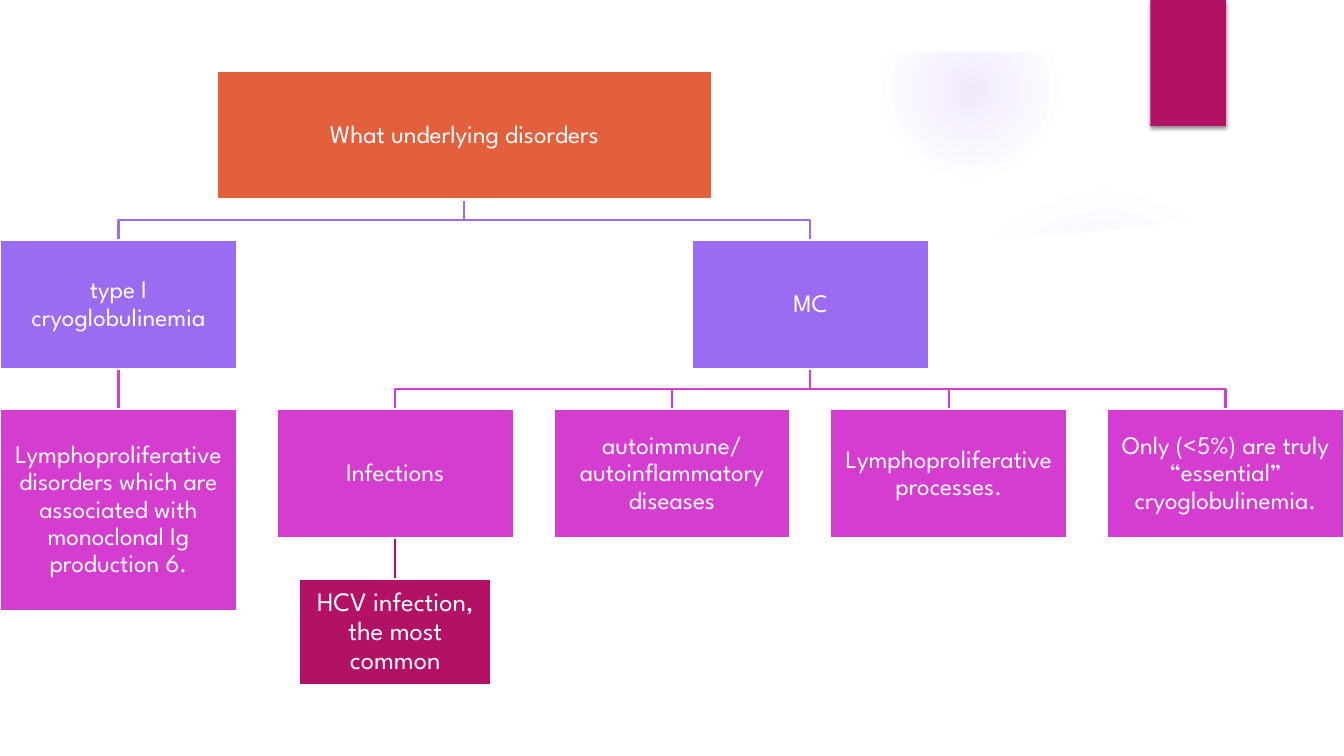
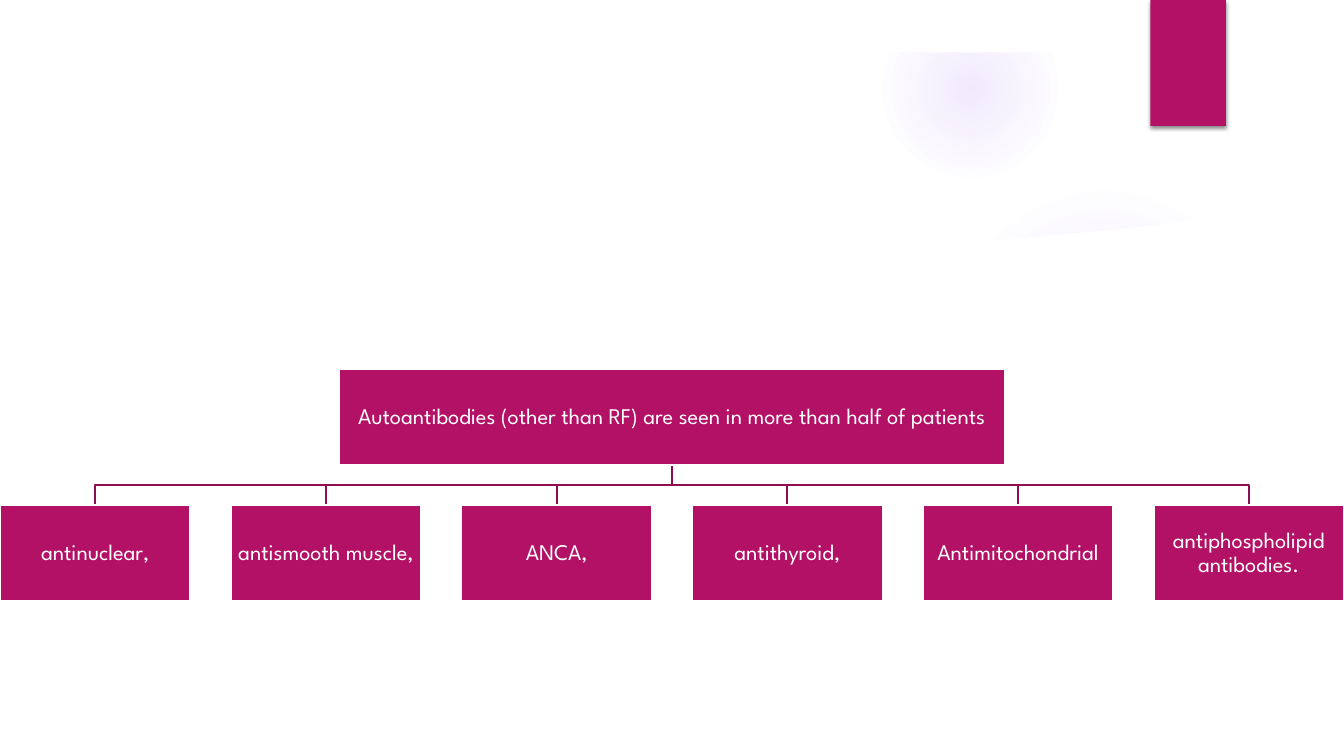
from dataclasses import dataclass, field

from pptx import Presentation
from pptx.dml.color import RGBColor
from pptx.enum.shapes import MSO_CONNECTOR, MSO_SHAPE
from pptx.enum.text import MSO_ANCHOR, PP_ALIGN
from pptx.oxml import parse_xml
from pptx.oxml.ns import nsdecls, qn
from pptx.util import Inches, Pt

RECTANGLE = MSO_SHAPE.RECTANGLE
OVAL = MSO_SHAPE.OVAL
STRAIGHT = MSO_CONNECTOR.STRAIGHT
MIDDLE = MSO_ANCHOR.MIDDLE
CENTER = PP_ALIGN.CENTER


@dataclass(frozen=True)
class Theme:
    width: float = 13.33
    height: float = 7.5
    font: str = "League Spartan"
    white: str = "FFFFFF"
    orange: str = "E45F3C"
    violet: str = "9B6BF2"
    orchid: str = "D53DD0"
    berry: str = "B31166"
    dark_berry: str = "8F0E52"
    disorder_size: int = 18
    infection_size: int = 19
    antibody_size: int = 16
    line: float = 1.5
    inset: float = 0.01
    level_gap: float = 0.4


THEME = Theme()

PANEL_CURVE = [
    (12.84, 2.04), (12.28, 2.13), (11.72, 2.2), (11.16, 2.27), (10.6, 2.32),
    (10.04, 2.37), (9.49, 2.41), (8.94, 2.44), (8.4, 2.46), (7.34, 2.48),
    (6.32, 2.47), (5.35, 2.45), (4.44, 2.41), (3.21, 2.33), (2.16, 2.24),
    (1.35, 2.15), (0.5, 2.04),
]


@dataclass
class Node:
    text: str
    fill: str
    width: float
    height: float
    size: int
    children: list = field(default_factory=list)
    link: str = ""
    center: float = 0
    top: float = 0

    @property
    def bottom(self):
        return self.top + self.height


def rgb(colour):
    return RGBColor.from_string(colour)


def add_block(slide, kind, left, top, width, height, fill):
    block = slide.shapes.add_shape(
        kind, Inches(left), Inches(top), Inches(width), Inches(height))
    block.shadow.inherit = False
    block.fill.solid()
    block.fill.fore_color.rgb = rgb(fill)
    block.line.fill.background()
    return block


def add_path(slide, points, close):
    (start_x, start_y), *rest = [(Inches(x), Inches(y)) for x, y in points]
    builder = slide.shapes.build_freeform(start_x, start_y)
    builder.add_line_segments(rest, close=close)
    outline = builder.convert_to_shape()
    outline.shadow.inherit = False
    return outline


def add_glow(slide, left, top, diameter, stops):
    glow = add_block(slide, OVAL, left, top, diameter, diameter, THEME.violet)
    stop_xml = "".join(
        f'<a:gs pos="{position * 1000}"><a:srgbClr val="{THEME.violet}">'
        f'<a:alpha val="{alpha * 1000}"/></a:srgbClr></a:gs>'
        for position, alpha in stops)
    gradient = parse_xml(
        f'<a:gradFill {nsdecls("a")}><a:gsLst>{stop_xml}</a:gsLst>'
        '<a:path path="circle"><a:fillToRect l="50000" t="50000" r="50000" b="50000"/>'
        '</a:path></a:gradFill>')
    properties = glow._element.spPr
    properties.replace(properties.find(qn("a:solidFill")), gradient)


def add_bookmark(slide):
    bookmark = add_block(slide, RECTANGLE, 11.41, 0, 0.75, 1.25, THEME.berry)
    bookmark._element.spPr.find(qn("a:effectLst")).append(parse_xml(
        f'<a:outerShdw {nsdecls("a")} blurRad="{Pt(3)}" dist="{Pt(2)}" '
        'dir="5400000" rotWithShape="0"><a:srgbClr val="000000">'
        '<a:alpha val="45000"/></a:srgbClr></a:outerShdw>'))


def add_backdrop(slide):
    add_glow(slide, 9.41, 1.83, 3.08, [(0, 7), (36, 6), (69, 0)])
    add_glow(slide, 8.75, 0.01, 1.75, [(0, 14), (36, 7), (73, 0)])
    panel = add_path(slide, [(0.5, 7), (12.84, 7), *PANEL_CURVE], close=True)
    panel.fill.solid()
    panel.fill.fore_color.rgb = rgb(THEME.white)
    panel.line.fill.background()
    add_block(slide, RECTANGLE, 0, 0, THEME.width, 0.52, THEME.white)
    add_bookmark(slide)


def add_link(slide, parent, child):
    if abs(parent.center - child.center) < 0.01:
        link = slide.shapes.add_connector(
            STRAIGHT, Inches(parent.center), Inches(parent.bottom),
            Inches(child.center), Inches(child.top))
        link._element.spPr.append(parse_xml(f'<a:effectLst {nsdecls("a")}/>'))
    else:
        bend = (parent.bottom + child.top) / 2
        link = add_path(slide, [
            (parent.center, parent.bottom), (parent.center, bend),
            (child.center, bend), (child.center, child.top)], close=False)
        link.fill.background()
    link.line.color.rgb = rgb(child.link or child.fill)
    link.line.width = Pt(THEME.line)


def add_node(slide, node):
    box = add_block(slide, RECTANGLE, node.center - node.width / 2, node.top,
                    node.width, node.height, node.fill)
    box.line.color.rgb = rgb(THEME.white)
    box.line.width = Pt(THEME.line)
    frame = box.text_frame
    frame.word_wrap = True
    frame.vertical_anchor = MIDDLE
    frame.margin_left = frame.margin_right = Inches(THEME.inset)
    frame.margin_top = frame.margin_bottom = Inches(THEME.inset)
    paragraph = frame.paragraphs[0]
    paragraph.alignment = CENTER
    paragraph.line_spacing = 0.9
    run = paragraph.add_run()
    run.text = node.text
    run.font.name = THEME.font
    run.font.size = Pt(node.size)
    run.font.color.rgb = rgb(THEME.white)


def place(node, top, leaf_centers):
    node.top = top
    for child in node.children:
        place(child, node.bottom + THEME.level_gap, leaf_centers)
    if node.children:
        node.center = (node.children[0].center + node.children[-1].center) / 2
    else:
        node.center = next(leaf_centers)


def walk(node):
    yield node
    for child in node.children:
        yield from walk(child)


def add_tree(slide, root, top, column_width):
    nodes = list(walk(root))
    leaf_count = sum(not node.children for node in nodes)
    pitch = (THEME.width - column_width) / (leaf_count - 1)
    place(root, top, iter([column_width / 2 + i * pitch for i in range(leaf_count)]))
    for parent in nodes:
        for child in parent.children:
            add_link(slide, parent, child)
    for node in nodes:
        add_node(slide, node)


def disorder(text, fill, children=(), width=2.35, height=1.28):
    return Node(text, fill, width, height, THEME.disorder_size, list(children))


def build_disorders(slide):
    hcv = Node("HCV infection, the most common", THEME.berry, 1.91, 1.06,
               THEME.infection_size)
    type_one = disorder("type I cryoglobulinemia", THEME.violet, [
        disorder("Lymphoproliferative disorders which are associated with "
                 "monoclonal Ig production 6.", THEME.orchid, height=2)])
    mixed = disorder("MC", THEME.violet, [
        disorder("Infections", THEME.orchid, [hcv]),
        disorder("autoimmune/ autoinflammatory diseases", THEME.orchid),
        disorder("Lymphoproliferative processes.", THEME.orchid),
        disorder("Only (<5%) are truly “essential” cryoglobulinemia.", THEME.orchid)])
    root = disorder("What underlying disorders", THEME.orange,
                    [type_one, mixed], width=4.91)
    add_tree(slide, root, 0.7, 2.35)


def build_autoantibodies(slide):
    names = ["antinuclear,", "antismooth muscle,", "ANCA,", "antithyroid,",
             "Antimitochondrial", "antiphospholipid antibodies."]
    antibodies = [Node(name, THEME.berry, 1.89, 0.95, THEME.antibody_size,
                       link=THEME.dark_berry) for name in names]
    root = Node("Autoantibodies (other than RF) are seen in more than half of patients",
                THEME.berry, 6.61, 0.95, THEME.antibody_size, antibodies)
    add_tree(slide, root, 3.66, 1.89)


def main():
    deck = Presentation()
    deck.slide_width = Inches(THEME.width)
    deck.slide_height = Inches(THEME.height)
    for build in (build_disorders, build_autoantibodies):
        slide = deck.slides.add_slide(deck.slide_layouts[6])
        add_backdrop(slide)
        build(slide)
    deck.save("out.pptx")


if __name__ == "__main__":
    main()
